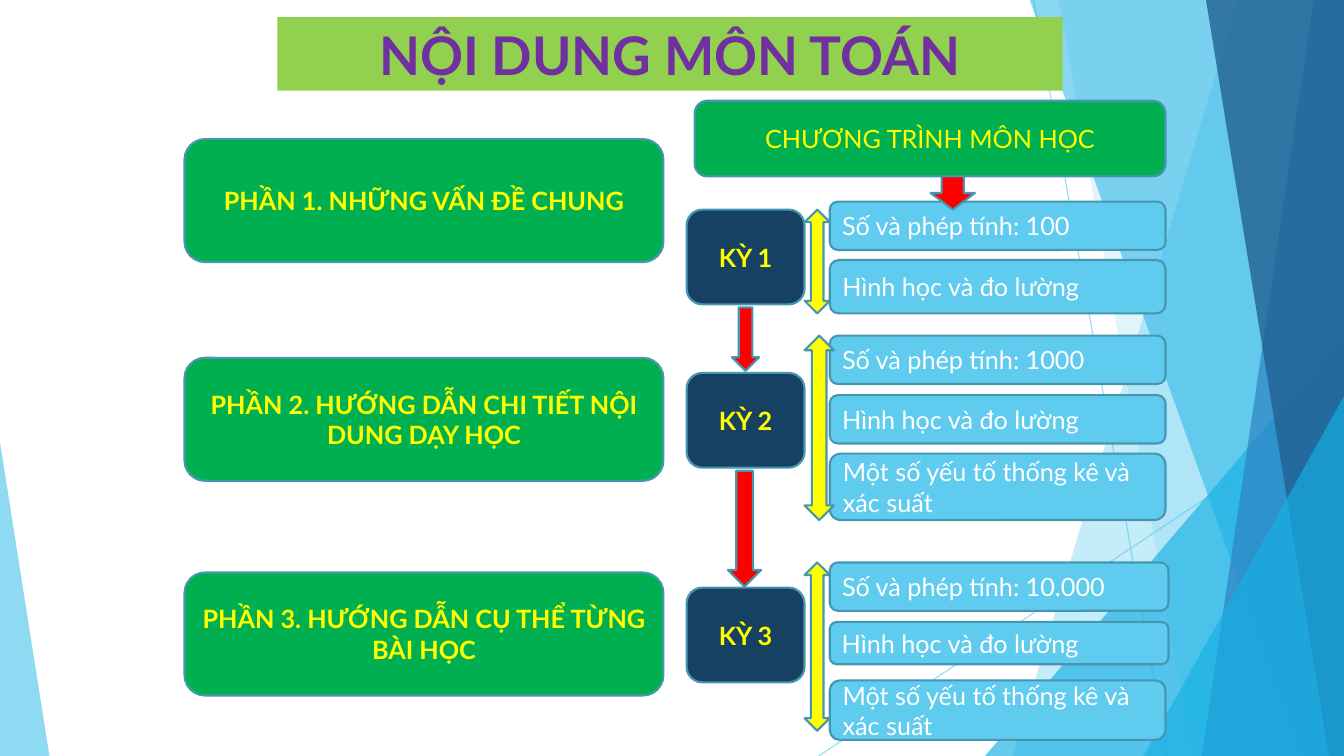
from lxml import etree
from pptx import Presentation
from pptx.dml.color import RGBColor
from pptx.enum.shapes import MSO_CONNECTOR, MSO_SHAPE as SHAPE
from pptx.enum.text import MSO_ANCHOR, MSO_AUTO_SIZE, PP_ALIGN as ALIGN
from pptx.oxml.ns import qn
from pptx.util import Inches, Pt

SKY = RGBColor(0x5F, 0xCB, 0xEF)
CYAN = RGBColor(0x17, 0xB0, 0xE4)
BLUE = RGBColor(0x2E, 0x83, 0xC3)
DEEP_BLUE = RGBColor(0x22, 0x62, 0x92)
NAVY = RGBColor(0x17, 0x41, 0x62)
OUTLINE = RGBColor(0x46, 0x96, 0xB1)
GREEN = RGBColor(0x00, 0xB0, 0x50)
LIME = RGBColor(0x92, 0xD0, 0x50)
PURPLE = RGBColor(0x70, 0x30, 0xA0)
YELLOW = RGBColor(0xFF, 0xFF, 0x00)
RED = RGBColor(0xFF, 0x00, 0x00)
WHITE = RGBColor(0xFF, 0xFF, 0xFF)

WIDTH, HEIGHT = 13.33, 7.5


def set_opacity(shape, percent):
    for color in shape.element.iter(qn("a:srgbClr")):
        etree.SubElement(color, qn("a:alpha"), val=str(percent * 1000))


def write(shape, text, size=18, color=YELLOW, bold=False, align=ALIGN.CENTER):
    tf = shape.text_frame
    tf.word_wrap = True
    tf.auto_size = MSO_AUTO_SIZE.NONE
    tf.vertical_anchor = MSO_ANCHOR.MIDDLE
    p = tf.paragraphs[0]
    p.alignment = align
    r = p.add_run()
    r.text = text
    r.font.name = "Lato"
    r.font.size = Pt(size)
    r.font.bold = bold
    r.font.color.rgb = color


class SlideBuilder:
    """Holds the slide and draws its elements in one style."""

    def __init__(self, s):
        self.s = s

    def title(self, text, box):
        """Place the title above everything drawn so far."""
        sp = self.s.shapes.title
        sp.left, sp.top, sp.width, sp.height = map(Inches, box)
        sp.fill.solid()
        sp.fill.fore_color.rgb = LIME
        write(sp, text, size=38, color=PURPLE, bold=True)
        sp.element.getparent().append(sp.element)

    def shape(self, kind, box, fill):
        sp = self.s.shapes.add_shape(kind, *map(Inches, box))
        sp.shadow.inherit = False
        sp.fill.solid()
        sp.fill.fore_color.rgb = fill
        sp.line.color.rgb = OUTLINE
        sp.line.width = Pt(1.5)
        return sp

    def card(self, text, box, fill, **fmt):
        write(self.shape(SHAPE.ROUNDED_RECTANGLE, box, fill), text, **fmt)

    def triangle(self, box, apex, fill, opacity):
        sp = self.shape(SHAPE.ISOSCELES_TRIANGLE, box, fill)
        sp.adjustments[0] = apex
        sp.line.fill.background()
        set_opacity(sp, opacity)

    def band(self, top_x, bottom_x, fill, opacity):
        """Fill from a slanted left edge to the right side of the slide."""
        top = Inches(-0.01)
        right, bottom = Inches(WIDTH), Inches(HEIGHT)
        fb = self.s.shapes.build_freeform(Inches(top_x), top)
        fb.add_line_segments(
            [(right, top), (right, bottom), (Inches(bottom_x), bottom)])
        sp = fb.convert_to_shape()
        sp.shadow.inherit = False
        sp.fill.solid()
        sp.fill.fore_color.rgb = fill
        sp.line.fill.background()
        set_opacity(sp, opacity)

    def line(self, start, end):
        cx = self.s.shapes.add_connector(
            MSO_CONNECTOR.STRAIGHT, *map(Inches, start + end))
        cx.line.color.rgb = SKY
        cx.line.width = Pt(0.75)
        set_opacity(cx, 70)
        etree.SubElement(cx.element.spPr, qn("a:effectLst"))


def draw_backdrop(b):
    b.line((10.25, 0), (11.58, HEIGHT))
    b.line((WIDTH, 4.03), (8.12, HEIGHT))
    b.band(12.28, 10.04, SKY, 36)
    b.band(10.5, 11.83, SKY, 20)
    b.triangle((9.77, 3.33, 3.56, 4.17), 1, CYAN, 66)
    b.band(10.21, 12.91, CYAN, 50)
    b.band(13.03, 11.92, BLUE, 70)
    b.band(11.96, 13.18, DEEP_BLUE, 80)
    b.triangle((11.34, 3.93, 1.99, 3.57), 1, CYAN, 66)
    b.triangle((0, 4.39, 0.49, 3.11), 0, SKY, 70)


def draw_curriculum(b):
    numbers = "Số và phép tính: "
    geometry = "Hình học và đo lường"
    statistics = "Một số yếu tố thống kê và xác suất"
    # Each term: name, top, topics (text, top, width, height), span arrow size
    terms = [
        ("KỲ 1", 2.08, [(numbers + "100", 2, 3.33, 0.48),
                        (geometry, 2.58, 3.33, 0.53)], (2.08, 0.25, 1.03)),
        ("KỲ 2", 3.7, [(numbers + "1000", 3.33, 3.33, 0.48),
                       (geometry, 3.92, 3.33, 0.48),
                       (statistics, 4.5, 3.33, 0.66)], (3.33, 0.29, 1.83)),
        ("KỲ 3", 5.83, [(numbers + "10.000", 5.58, 3.36, 0.48),
                        (geometry, 6.17, 3.36, 0.42),
                        (statistics, 6.75, 3.33, 0.59)], (5.58, 0.25, 1.67)),
    ]
    b.card("CHƯƠNG TRÌNH MÔN HỌC", (6.89, 1, 4.67, 0.75), GREEN)
    for name, top, topics, span in terms:
        b.card(name, (6.81, top, 1.17, 0.94), NAVY, bold=True)
        for text, y, w, h in topics:
            b.card(text, (8.23, y, w, h), SKY, color=WHITE, align=ALIGN.LEFT)
        b.shape(SHAPE.UP_DOWN_ARROW, (7.98, *span), YELLOW)
    for box in [(7.26, 3.05, 0.27, 0.63), (7.22, 4.67, 0.33, 1.15),
                (9.23, 1.75, 0.44, 0.33)]:
        b.shape(SHAPE.DOWN_ARROW, box, RED)


def draw_parts(b):
    parts = [
        (1.38, "PHẦN 1. NHỮNG VẤN ĐỀ CHUNG"),
        (3.55, "PHẦN 2. HƯỚNG DẪN CHI TIẾT NỘI DUNG DẠY HỌC"),
        (5.68, "PHẦN 3. HƯỚNG DẪN CỤ THỂ TỪNG BÀI HỌC"),
    ]
    for top, text in parts:
        b.card(text, (1.83, top, 4.75, 1.22), GREEN, bold=True)


def main():
    prs = Presentation()
    prs.slide_width, prs.slide_height = Inches(WIDTH), Inches(HEIGHT)
    b = SlideBuilder(prs.slides.add_slide(prs.slide_layouts[5]))
    draw_backdrop(b)
    b.title("NỘI DUNG MÔN TOÁN", (2.75, 0.17, 7.79, 0.73))
    draw_curriculum(b)
    draw_parts(b)
    prs.save("out.pptx")


if __name__ == "__main__":
    main()
